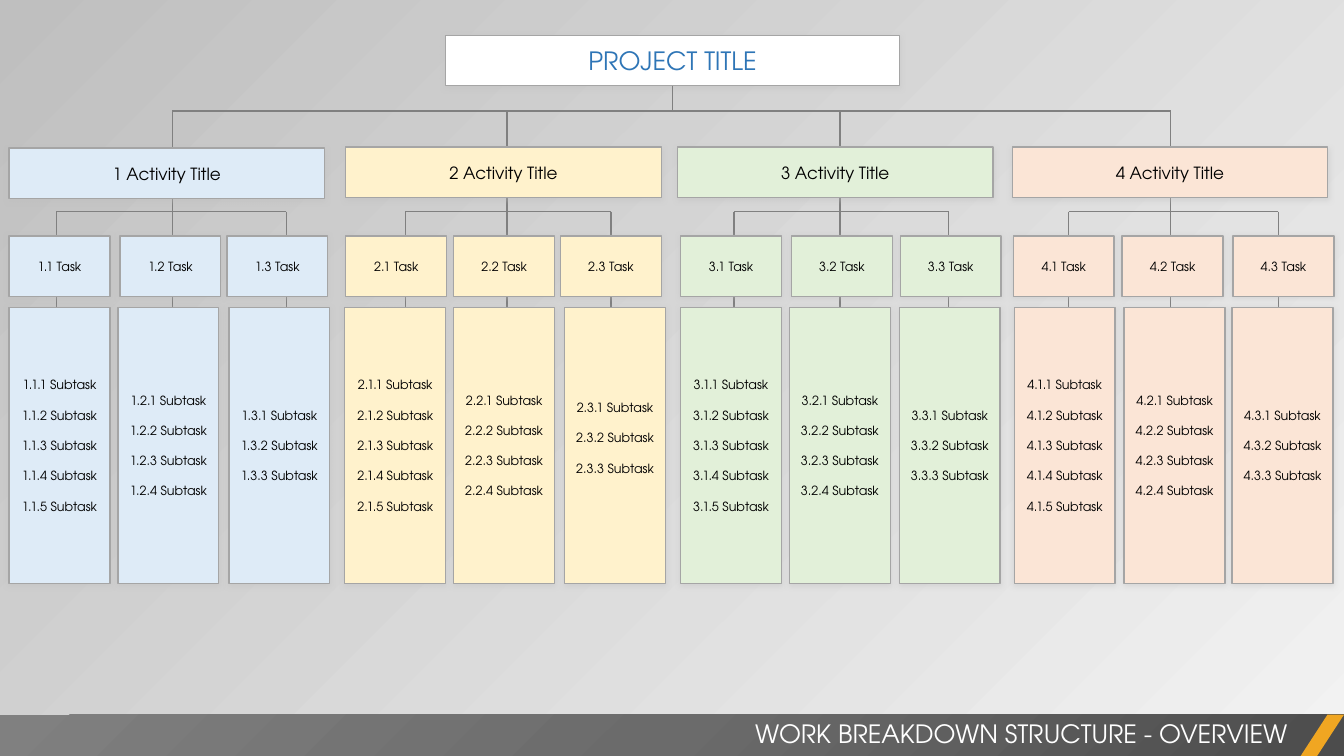
from dataclasses import dataclass

from pptx import Presentation
from pptx.dml.color import RGBColor
from pptx.enum.shapes import MSO_CONNECTOR as Connector
from pptx.enum.shapes import MSO_SHAPE as Preset
from pptx.enum.text import MSO_ANCHOR as Anchor
from pptx.enum.text import MSO_AUTO_SIZE as AutoSize
from pptx.enum.text import PP_ALIGN as Align
from pptx.oxml import parse_xml
from pptx.oxml.ns import nsdecls, qn
from pptx.shapes.autoshape import Shape
from pptx.shapes.connector import Connector as Line
from pptx.slide import Slide
from pptx.text.text import TextFrame
from pptx.util import Emu, Pt

PX = 9144  # EMU, so 100 px make an inch


@dataclass(frozen=True)
class Theme:
    font: str = "TeX Gyre Adventor"
    heading_size: int = 18
    activity_size: int = 12
    task_size: int = 9
    subtask_gap: float = 10.8
    text: str = "000000"
    project: str = "2E75B6"
    white: str = "FFFFFF"
    border: str = "A5A5A5"
    wire: str = "808080"
    shadow: str = "BFBFBF"
    accent: str = "F0A622"
    page_light: str = "F2F2F2"
    page_dark: str = "BFBFBF"
    band: tuple[str, ...] = ("4C4C4C", "6B6B6B", "808080")


@dataclass(frozen=True)
class Area:
    left: int
    top: int
    width: int
    height: int

    def emu(self) -> tuple[Emu, ...]:
        return tuple(px(n) for n in (self.left, self.top, self.width, self.height))


@dataclass(frozen=True)
class Activity:
    left: int
    top: int
    fill: str
    wires: tuple[int, int, int]
    task_lefts: tuple[int, int, int]
    list_lefts: tuple[int, int, int]


THEME = Theme()
PAGE_WIDTH, PAGE_HEIGHT = 1333, 750
BUS_Y, RAIL_Y, WIRE_END_Y = 110, 210, 333
TASK_Y, LIST_Y = 234, 305
BAND_Y, BAND_HEIGHT = 709, 41
SUBTASK_COUNTS = (5, 4, 3)
RAISED_LIST = (2, 3)  # this list sits a little above the middle
RAISED_INSET = 20

ACTIVITIES = (
    Activity(9, 147, "DEEBF7", (56, 171, 284), (9, 119, 225), (9, 117, 227)),
    Activity(343, 146, "FFF2CC", (402, 503, 606), (343, 450, 556), (342, 450, 560)),
    Activity(672, 146, "E2F0D9", (728, 833, 941), (675, 785, 893), (675, 783, 892)),
    Activity(1004, 146, "FBE5D6", (1060, 1161, 1268), (1005, 1113, 1223), (1006, 1115, 1222)),
)


def px(length: int) -> Emu:
    return Emu(length * PX)


def rgb(colour: str) -> RGBColor:
    return RGBColor.from_string(colour)


def write(frame: TextFrame, lines: list[str], size: int, colour: str,
          align: Align = Align.CENTER, gap: float = 0) -> None:
    for index, line in enumerate(lines):
        para = frame.add_paragraph() if index else frame.paragraphs[0]
        para.alignment = align
        if index:
            para.space_before = Pt(gap)
        span = para.add_run()
        span.text = line
        span.font.name = THEME.font
        span.font.size = Pt(size)
        span.font.color.rgb = rgb(colour)


def add_plain(page: Slide, preset: Preset, area: Area, fill: str) -> Shape:
    shape = page.shapes.add_shape(preset, *area.emu())
    shape.shadow.inherit = False
    shape.fill.solid()
    shape.fill.fore_color.rgb = rgb(fill)
    shape.line.fill.background()
    return shape


def add_box(page: Slide, area: Area, fill: str, lines: list[str], size: int,
            colour: str = THEME.text, gap: float = 0) -> Shape:
    """Add a bordered rectangle with a soft shadow and centred text."""
    box = add_plain(page, Preset.RECTANGLE, area, fill)
    box.line.color.rgb = rgb(THEME.border)
    box.line.width = Pt(1)
    box.element.spPr.find(qn("a:effectLst")).append(parse_xml(
        f'<a:outerShdw {nsdecls("a")} blurRad="{Pt(4)}" dist="{Pt(1)}" dir="5400000"'
        f' rotWithShape="0"><a:srgbClr val="{THEME.shadow}"><a:alpha val="40000"/>'
        '</a:srgbClr></a:outerShdw>'))
    frame = box.text_frame
    frame.word_wrap = True
    frame.vertical_anchor = Anchor.MIDDLE
    write(frame, lines, size, colour, gap=gap)
    return box


def add_wire(page: Slide, x1: int, y1: int, x2: int, y2: int) -> Line:
    wire = page.shapes.add_connector(Connector.STRAIGHT, px(x1), px(y1), px(x2), px(y2))
    wire.line.color.rgb = rgb(THEME.wire)
    wire.line.width = Pt(1)
    wire.element.spPr.append(parse_xml(f'<a:effectLst {nsdecls("a")}/>'))
    return wire


def paint_background(page: Slide) -> None:
    fill = page.background.fill
    fill.gradient()
    fill.gradient_angle = 135
    for stop, colour in zip(fill.gradient_stops, (THEME.page_light, THEME.page_dark)):
        stop.color.rgb = rgb(colour)


def add_wires(page: Slide) -> None:
    """Draw the bus, the rails and the drops that run behind the boxes."""
    stems = [activity.wires[1] for activity in ACTIVITIES]
    add_wire(page, stems[0], BUS_Y, stems[-1], BUS_Y)
    for activity in ACTIVITIES:
        first, stem, last = activity.wires
        add_wire(page, first, RAIL_Y, last, RAIL_Y)
        for x in activity.wires:
            add_wire(page, x, BUS_Y if x == stem else RAIL_Y, x, WIRE_END_Y)


def add_project(page: Slide) -> None:
    area = Area(442, 35, 450, 50)
    box = add_box(page, area, THEME.white, ["PROJECT TITLE"],
                  THEME.heading_size, THEME.project)
    middle = area.left + area.width // 2
    wire = add_wire(page, middle, area.top + area.height, middle, BUS_Y)
    wire.begin_connect(box, 2)


def add_activity(page: Slide, number: int, activity: Activity) -> None:
    add_box(page, Area(activity.left, activity.top, 313, 50), activity.fill,
            [f"{number} Activity Title"], THEME.activity_size)
    columns = zip(activity.task_lefts, activity.list_lefts, SUBTASK_COUNTS)
    for task, (task_left, list_left, count) in enumerate(columns, 1):
        add_box(page, Area(task_left, TASK_Y, 100, 60), activity.fill,
                [f"{number}.{task} Task"], THEME.task_size)
        subtasks = [f"{number}.{task}.{item} Subtask" for item in range(1, count + 1)]
        box = add_box(page, Area(list_left, LIST_Y, 100, 274), activity.fill,
                      subtasks, THEME.task_size, gap=THEME.subtask_gap)
        if (number, task) == RAISED_LIST:
            box.text_frame.margin_bottom = px(RAISED_INSET)


def add_title_band(page: Slide) -> None:
    band = add_plain(page, Preset.RECTANGLE,
                     Area(0, BAND_Y, PAGE_WIDTH, BAND_HEIGHT), THEME.band[0])
    stops = "".join(f'<a:gs pos="{index * 50000}"><a:srgbClr val="{colour}"/></a:gs>'
                    for index, colour in enumerate(THEME.band))
    properties = band.element.spPr
    properties.replace(properties.find(qn("a:solidFill")), parse_xml(
        f'<a:gradFill {nsdecls("a")} rotWithShape="1"><a:gsLst>{stops}</a:gsLst>'
        '<a:path path="circle"><a:fillToRect l="100000" t="100000"/></a:path></a:gradFill>'))
    slash = add_plain(page, Preset.PARALLELOGRAM, Area(1290, BAND_Y, 43, BAND_HEIGHT),
                      THEME.accent)
    slash.adjustments[0] = 0.65

    title = page.shapes.title
    title.left, title.top, title.width, title.height = Area(525, 708, 762, 40).emu()
    frame = title.text_frame
    frame.word_wrap = True
    frame.auto_size = AutoSize.SHAPE_TO_FIT_TEXT
    frame.vertical_anchor = Anchor.TOP
    write(frame, ["WORK BREAKDOWN STRUCTURE - OVERVIEW"], THEME.heading_size,
          THEME.white, Align.RIGHT)
    title.element.getparent().append(title.element)  # in front of the band


def main() -> None:
    deck = Presentation()
    deck.slide_width, deck.slide_height = px(PAGE_WIDTH), px(PAGE_HEIGHT)
    page = deck.slides.add_slide(deck.slide_layouts.get_by_name("Title Only"))
    paint_background(page)
    add_wires(page)
    add_project(page)
    for number, activity in enumerate(ACTIVITIES, 1):
        add_activity(page, number, activity)
    add_title_band(page)
    deck.save("out.pptx")


if __name__ == "__main__":
    main()
